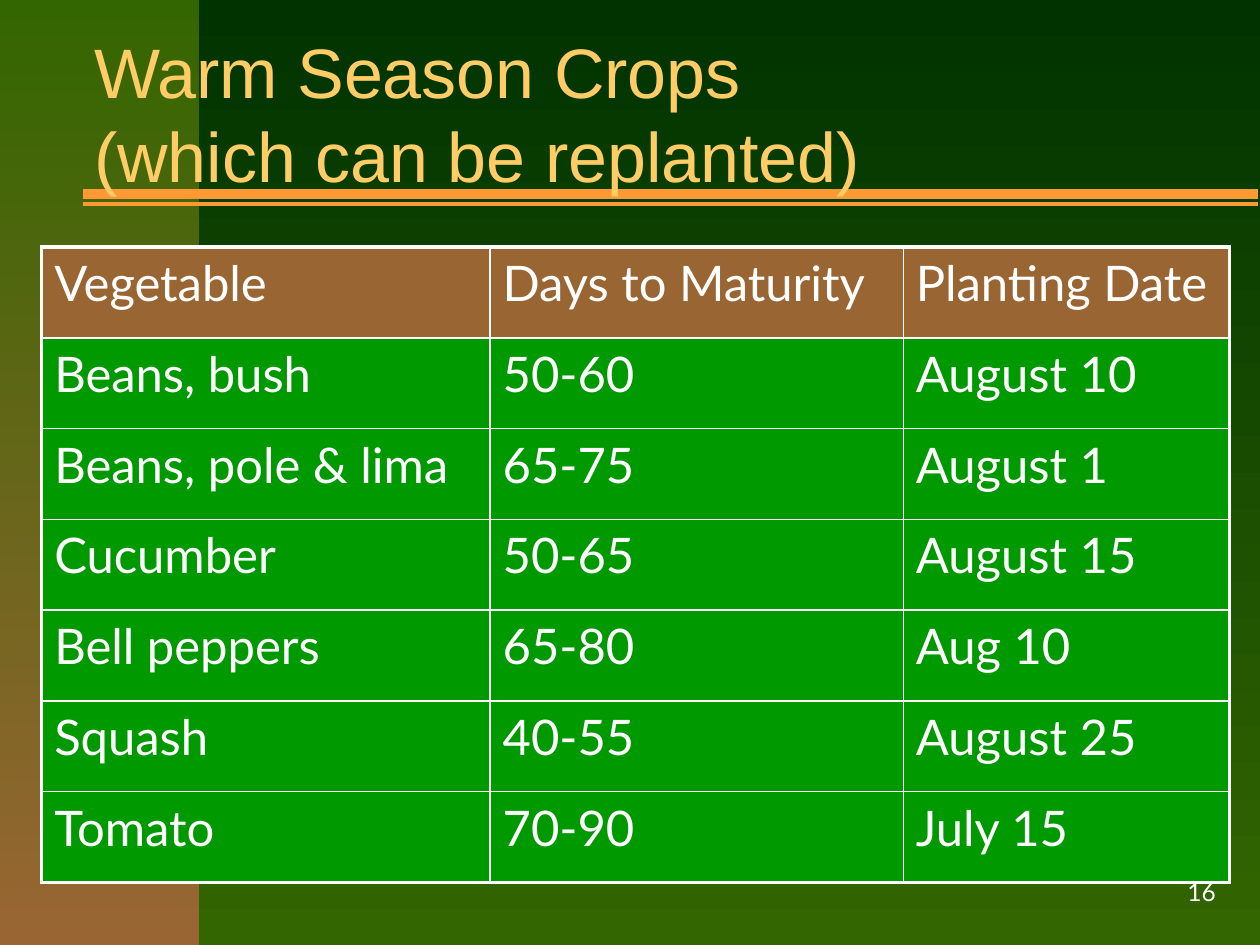
"""Build the slide that lists warm season crops with maturity and planting dates."""
from lxml import etree
from pptx import Presentation
from pptx.dml.color import RGBColor
from pptx.enum.shapes import MSO_CONNECTOR, MSO_SHAPE
from pptx.enum.text import MSO_ANCHOR, PP_ALIGN
from pptx.oxml import parse_xml
from pptx.oxml.ns import nsdecls, qn
from pptx.util import Cm, Pt

STRAIGHT = MSO_CONNECTOR.STRAIGHT
RECTANGLE = MSO_SHAPE.RECTANGLE
MIDDLE = MSO_ANCHOR.MIDDLE
LEFT, RIGHT = PP_ALIGN.LEFT, PP_ALIGN.RIGHT

COLORS = {
    "dark": "003300", "green": "336600", "brown": "996633", "orange": "FF9933",
    "title": "FFCC66", "cell": "009900", "white": "FFFFFF",
}
TITLE = "Warm Season Crops\v(which can be replanted)"
PAGE_NUMBER = "16"
CROPS = [
    ("Vegetable", "Days to Maturity", "Planting Date"),
    ("Beans, bush", "50-60", "August 10"),
    ("Beans, pole & lima", "65-75", "August 1"),
    ("Cucumber", "50-65", "August 15"),
    ("Bell peppers", "65-80", "Aug 10"),
    ("Squash", "40-55", "August 25"),
    ("Tomato", "70-90", "July 15"),
]
COLUMN_WIDTHS = (9.04, 8.33, 6.58)
ROW_HEIGHT = 1.83
TABLE_LEFT, TABLE_TOP = 0.84, 4.98
RULES = [(4.11, 2), (3.91, 6)]
RULE_LEFT, RULE_RIGHT = 1.68, 25.35
OUTER_BORDER, INNER_BORDER = 2.25, 1

TITLE_FONT = {"name": "Arial", "size": Pt(40)}
TABLE_FONT = {"name": "Lato", "size": Pt(28)}
NUMBER_FONT = {"name": "Lato", "size": Pt(14)}


def rgb(name):
    return RGBColor.from_string(COLORS[name])


def fill_gradient(fill, *names):
    fill.gradient()
    fill.gradient_angle = 270
    for stop, name in zip(fill.gradient_stops, names):
        stop.color.rgb = rgb(name)


def style_text(text_frame, font_format, color, alignment=LEFT):
    for paragraph in text_frame.paragraphs:
        paragraph.alignment = alignment
        for run in paragraph.runs:
            for attribute, value in font_format.items():
                setattr(run.font, attribute, value)
            run.font.color.rgb = rgb(color)


def add_text(slide, box, text, font_format, color, alignment=LEFT):
    shape = slide.shapes.add_textbox(*map(Cm, box))
    text_frame = shape.text_frame
    text_frame.word_wrap = True
    text_frame.vertical_anchor = MIDDLE
    text_frame.text = text
    style_text(text_frame, font_format, color, alignment)
    return shape


def add_text_shadow(shape):
    for paragraph in shape.text_frame.paragraphs:
        for run in paragraph.runs:
            run.font.fill._xPr.find(qn("a:solidFill")).addnext(parse_xml(
                f'<a:effectLst {nsdecls("a")}>'
                '<a:outerShdw blurRad="38100" dist="38100" dir="2700000" algn="tl">'
                '<a:srgbClr val="000000"><a:alpha val="43000"/></a:srgbClr>'
                '</a:outerShdw></a:effectLst>'))


def set_borders(cell, widths):
    properties = cell._tc.get_or_add_tcPr()
    for index, (side, width) in enumerate(widths.items()):
        properties.insert(index, parse_xml(
            f'<a:ln{side} {nsdecls("a")} w="{Pt(width)}"><a:solidFill>'
            f'<a:srgbClr val="{COLORS["white"]}"/></a:solidFill></a:ln{side}>'))


def add_rule(slide, top, width):
    rule = slide.shapes.add_connector(
        STRAIGHT, Cm(RULE_LEFT), Cm(top), Cm(RULE_RIGHT), Cm(top))
    rule.line.color.rgb = rgb("orange")
    rule.line.width = Pt(width)
    etree.SubElement(rule._element.spPr, qn("a:effectLst"))


def add_crop_table(slide):
    last_row, last_column = len(CROPS) - 1, len(COLUMN_WIDTHS) - 1
    table = slide.shapes.add_table(
        len(CROPS), len(COLUMN_WIDTHS), Cm(TABLE_LEFT), Cm(TABLE_TOP),
        Cm(sum(COLUMN_WIDTHS)), Cm(ROW_HEIGHT * len(CROPS))).table
    table.first_row = table.horz_banding = False
    for column, width in zip(table.columns, COLUMN_WIDTHS):
        column.width = Cm(width)
    for row_index, crop in enumerate(CROPS):
        table.rows[row_index].height = Cm(ROW_HEIGHT)
        for column_index, text in enumerate(crop):
            cell = table.cell(row_index, column_index)
            cell.text = text
            style_text(cell.text_frame, TABLE_FONT, "white")
            cell.fill.solid()
            cell.fill.fore_color.rgb = rgb("cell" if row_index else "brown")
            on_edge = {
                "L": column_index == 0, "R": column_index == last_column,
                "T": row_index == 0, "B": row_index == last_row,
            }
            set_borders(cell, {side: OUTER_BORDER if edge else INNER_BORDER
                               for side, edge in on_edge.items()})


def main():
    presentation = Presentation()
    presentation.slide_width, presentation.slide_height = Cm(25.4), Cm(19.05)
    slide = presentation.slides.add_slide(presentation.slide_layouts[6])
    fill_gradient(slide.background.fill, "dark", "green")

    side_band = slide.shapes.add_shape(RECTANGLE, 0, 0, Cm(4.01), Cm(19.05))
    side_band.shadow.inherit = False
    side_band.line.fill.background()
    fill_gradient(side_band.fill, "green", "brown")
    for top, width in RULES:
        add_rule(slide, top, width)

    add_text(slide, (19.48, 17.35, 5.28, 1.27), PAGE_NUMBER, NUMBER_FONT, "white", RIGHT)
    title = add_text(slide, (1.65, 0.74, 21.64, 3.07), TITLE, TITLE_FONT, "title")
    add_text_shadow(title)
    add_crop_table(slide)
    presentation.save("out.pptx")


if __name__ == "__main__":
    main()
